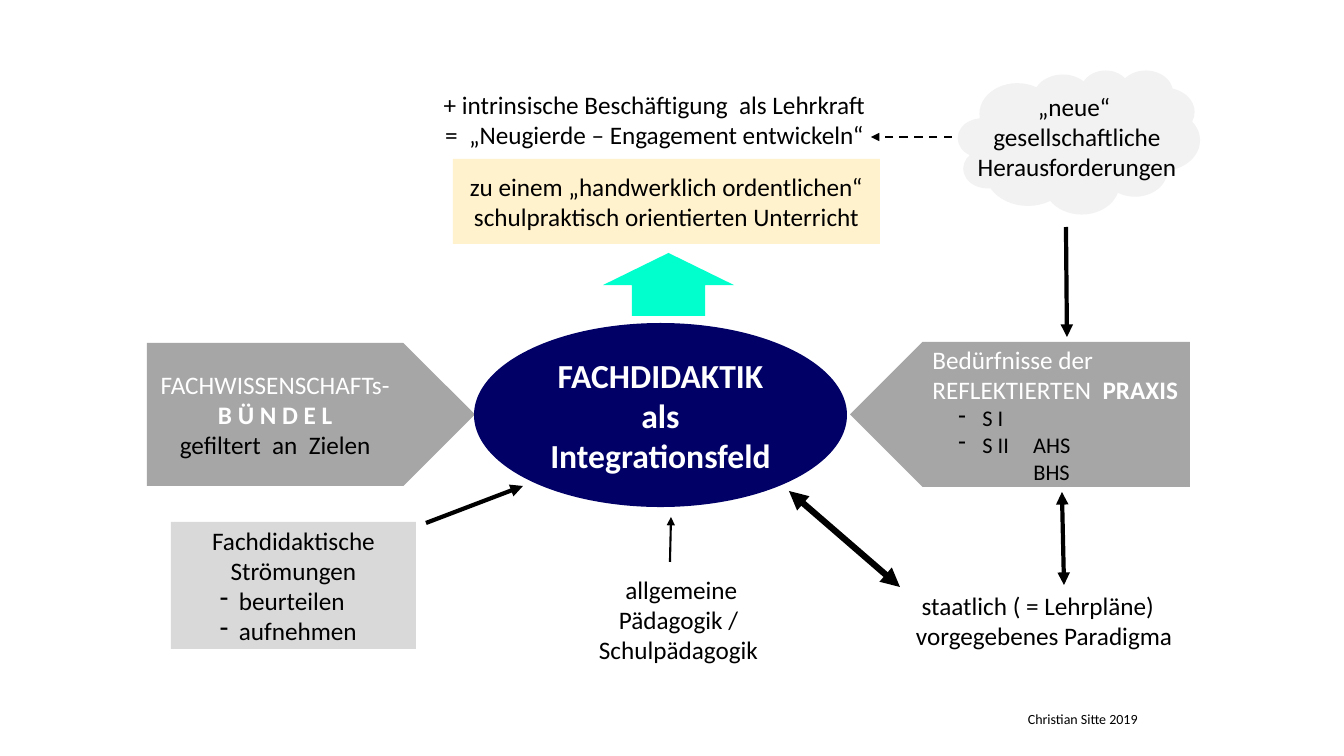
"""Build a slide showing subject didactics as a field of integration."""
from pptx import Presentation
from pptx.dml.color import RGBColor
from pptx.enum.dml import MSO_LINE
from pptx.enum.shapes import MSO_CONNECTOR, MSO_SHAPE
from pptx.enum.text import MSO_ANCHOR, PP_ALIGN
from pptx.oxml.ns import qn
from pptx.util import Pt
from lxml.etree import SubElement

WIDE, HIGH = 1344, 756
PX = 12192000 / WIDE
FONT = "Calibri"
BLACK = RGBColor(0, 0, 0)
WHITE = RGBColor(255, 255, 255)
NAVY = RGBColor(0, 0, 102)
MINT = RGBColor(0, 255, 204)
CREAM = RGBColor(255, 242, 204)
MIST = RGBColor(242, 242, 242)
PALE = RGBColor(217, 217, 217)
GREY = RGBColor(166, 166, 166)

LIGHT = {"color": WHITE}
LEFT = {"align": PP_ALIGN.LEFT}
TITLE = {"color": WHITE, "size": 24, "bold": True}
POINT = LEFT | {"margin": 58, "hang": 19}
LEVEL = LEFT | {"margin": 50, "hang": 24, "size": 16}

SHAPES = [
    (MSO_SHAPE.CLOUD, (958, 70, 242, 144), MIST, (), []),
    (MSO_SHAPE.RIGHT_ARROW, (147, 343, 328, 143), GREY, (1, 0.5), [
        ("FACHWISSENSCHAFTs-", LIGHT),
        ("B Ü N D E L", LIGHT | {"bold": True}),
        ("gefiltert  an  Zielen", {})]),
    (MSO_SHAPE.UP_ARROW, (603, 253, 131, 63), MINT, (0.56, 0.51), []),
    (MSO_SHAPE.RECTANGLE, (453, 159, 427, 85), CREAM, (), [
        ("zu einem „handwerklich ordentlichen“", {}),
        ("schulpraktisch orientierten Unterricht", {})]),
    (MSO_SHAPE.RECTANGLE, (171, 522, 245, 127), PALE, (), [
        ("Fachdidaktische Strömungen", {}),
        ("beurteilen", POINT),
        ("aufnehmen", POINT)]),
    (MSO_SHAPE.LEFT_ARROW, (850, 342, 340, 145), GREY, (1, 0.5), [
        ("Bedürfnisse der", LIGHT | LEFT),
        ("REFLEKTIERTEN  ", LIGHT | LEFT | {"strong": "PRAXIS"}),
        ("S I", LEVEL),
        ("S II\tAHS", LEVEL),
        ("BHS", LEFT | {"margin": 101, "size": 16})]),
    (MSO_SHAPE.OVAL, (474, 323, 373, 184), NAVY, (), [
        ("FACHDIDAKTIK", TITLE),
        ("als", TITLE),
        ("Integrationsfeld", TITLE)]),
]
NOTES = [
    ((562, 569, 233, 101), [
        (" allgemeine", {}),
        ("Pädagogik / Schulpädagogik", {})]),
    ((906, 585, 278, 71), [
        (" staatlich ( = Lehrpläne)", LEFT),
        ("vorgegebenes Paradigma", LEFT)]),
    ((414, 84, 481, 71), [
        ("+ intrinsische Beschäftigung  als Lehrkraft", {}),
        ("=  „Neugierde – Engagement entwickeln“", {})]),
    ((963, 86, 228, 101), [
        ("„neue“ ", {}),
        ("gesellschaftliche Herausforderungen", {})]),
    ((1006, 706, 150, 27), [
        ("Christian Sitte 2019", LEFT | {"margin": 12, "size": 10})]),
]
ARROWS = [
    ((789, 491), (900, 587), 4.5, True, False),
    ((1062, 492), (1064, 585), 3, True, False),
    ((1066, 227), (1067, 337), 3, False, False),
    ((426, 523), (523, 486), 3, False, False),
    ((670, 562), (671, 517), 1.5, False, False),
    ((952, 137), (871, 137), 1.5, False, True),
]


def emu(*marks):
    return [round(mark * PX) for mark in marks]


def write(frame, lines):
    frame.word_wrap = True
    for row, (text, style) in enumerate(lines):
        para = frame.paragraphs[0] if row == 0 else frame.add_paragraph()
        para.alignment = style.get("align", PP_ALIGN.CENTER)
        font = para.font
        font.name, font.size = FONT, Pt(style.get("size", 18))
        font.bold = style.get("bold", False)
        font.color.rgb = style.get("color", BLACK)
        para.add_run().text = text
        if "strong" in style:
            run = para.add_run()
            run.text, run.font.bold = style["strong"], True
        indent(para, style.get("margin", 0), style.get("hang", 0))


def indent(para, margin, hang):
    props = para._p.get_or_add_pPr()
    left, back = emu(margin, -hang)
    props.set("marL", str(left))
    props.set("indent", str(back))
    if hang:
        bullet = props.makeelement(qn("a:buChar"), {"char": "-"})
        props.insert(0, bullet)


def draw(slide, kind, box, fill, bends, lines):
    shape = slide.shapes.add_shape(kind, *emu(*box))
    shape.shadow.inherit = False
    shape.fill.solid()
    shape.fill.fore_color.rgb = fill
    shape.line.fill.background()
    for spot, bend in enumerate(bends):
        shape.adjustments[spot] = bend
    if lines:
        shape.text_frame.vertical_anchor = MSO_ANCHOR.MIDDLE
        write(shape.text_frame, lines)


def link(slide, start, end, width, double, dashed):
    wire = slide.shapes.add_connector(MSO_CONNECTOR.STRAIGHT, *emu(*start, *end))
    wire.line.color.rgb = BLACK
    wire.line.width = Pt(width)
    if dashed:
        wire.line.dash_style = MSO_LINE.DASH
    props = wire._element.spPr
    for tip in ("a:headEnd", "a:tailEnd") if double else ("a:tailEnd",):
        SubElement(wire.line._get_or_add_ln(), qn(tip), type="triangle")
    SubElement(props, qn("a:effectLst"))


def main():
    deck = Presentation()
    deck.slide_width, deck.slide_height = emu(WIDE, HIGH)
    slide = deck.slides.add_slide(deck.slide_layouts[6])
    for item in SHAPES:
        draw(slide, *item)
    for box, lines in NOTES:
        write(slide.shapes.add_textbox(*emu(*box)).text_frame, lines)
    for arrow in ARROWS:
        link(slide, *arrow)
    deck.save("out.pptx")


if __name__ == "__main__":
    main()
